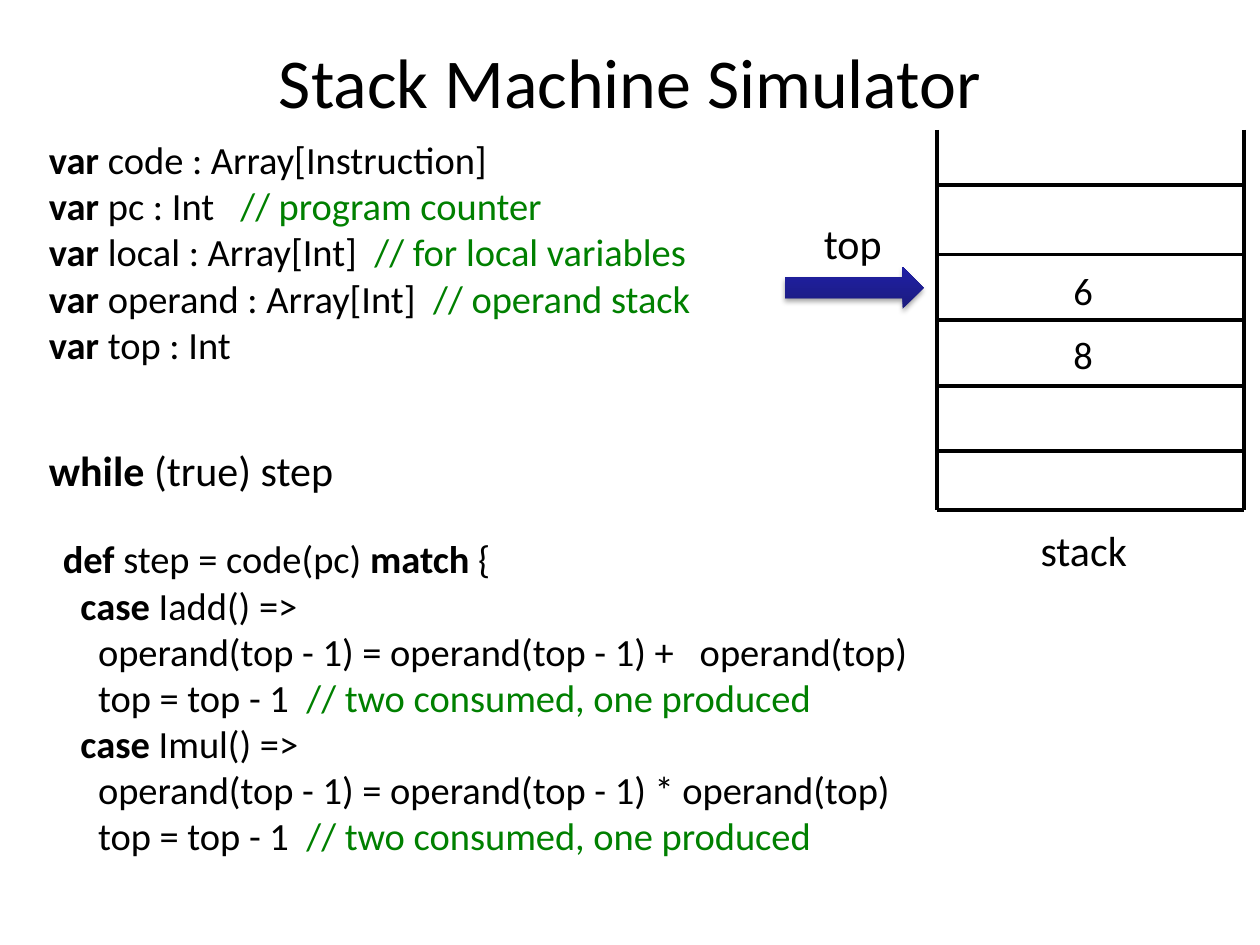
from lxml import etree
from pptx import Presentation
from pptx.dml.color import RGBColor
from pptx.enum.shapes import MSO_CONNECTOR as CONN, MSO_SHAPE as SHAPE
from pptx.enum.text import MSO_ANCHOR as ANCHOR, MSO_AUTO_SIZE as AUTO, PP_ALIGN as ALIGN
from pptx.oxml import parse_xml
from pptx.oxml.ns import nsdecls, qn
from pptx.util import Inches, Pt

BLACK, GREEN = "000000", "008000"
INDENT = 0.14  # one code level

# Run styles: keyword, plain code, comment
KEY = {"bold": True, "color": BLACK}
CODE = {"bold": False, "color": BLACK}
NOTE = {"bold": False, "color": GREEN}

# Each code line: indent level, then (text, style) runs
VARS = [
    (0, ("var ", KEY), ("code : Array[Instruction]", CODE)),
    (0, ("var ", KEY), ("pc : Int   ", CODE), ("// program counter", NOTE)),
    (0, ("var ", KEY), ("local : Array[Int]  ", CODE), ("// for local variables", NOTE)),
    (0, ("var ", KEY), ("operand : Array[Int]  ", CODE), ("// operand stack", NOTE)),
    (0, ("var ", KEY), ("top : Int", CODE)),
]
LOOP = [(0, ("while ", KEY), ("(true) step", CODE))]
POP = (2, ("top = top - 1  ", CODE), ("// two consumed, one produced", NOTE))
STEP = [
    (0, ("def ", KEY), ("step = code(pc) ", CODE), ("match", KEY), (" {", CODE)),
    (1, ("case ", KEY), ("Iadd() =>", CODE)),
    (2, ("operand(top - 1) = operand(top - 1) +   operand(top)", CODE)),
    POP,
    (1, ("case ", KEY), ("Imul() =>", CODE)),
    (2, ("operand(top - 1) = operand(top - 1) * operand(top)", CODE)),
    POP,
]

# Stack frame
LEFT, RIGHT, TOP, BOTTOM = 7.44, 9.87, 1.03, 4.05
ROWS = [1.47, 2.02, 2.54, 3.06, 3.58, BOTTOM]


def rgb(color):
    return RGBColor.from_string(color)


def add_run(p, text, size, style):
    r = p.add_run()
    r.text = text
    font = {"name": "Calibri", "size": Pt(size), "bold": style["bold"]}
    for name, value in font.items():
        setattr(r.font, name, value)
    r.font.color.rgb = rgb(style["color"])


def add_text(slide, box, lines, size, wrap=True):
    tf = slide.shapes.add_textbox(*map(Inches, box)).text_frame
    for name, value in {"word_wrap": wrap, "auto_size": AUTO.SHAPE_TO_FIT_TEXT}.items():
        setattr(tf, name, value)
    for i, (level, *runs) in enumerate(lines):
        p = tf.add_paragraph() if i else tf.paragraphs[0]
        if level:
            p._p.get_or_add_pPr().set("marL", str(Inches(level * INDENT)))
        for text, style in runs:
            add_run(p, text, size, style)


def add_label(slide, box, text, size):
    add_text(slide, box, [(0, (text, CODE))], size, wrap=False)


def add_line(slide, *ends):
    line = slide.shapes.add_connector(CONN.STRAIGHT, *map(Inches, ends))
    line.line.color.rgb = rgb(BLACK)
    line.line.width = Pt(2.25)
    etree.SubElement(line._element.spPr, qn("a:effectLst"))


def add_pointer(slide, box):
    sp = slide.shapes.add_shape(SHAPE.RIGHT_ARROW, *map(Inches, box))
    sp.fill.gradient()
    sp.fill.gradient_angle = 90
    for stop, color in zip(sp.fill.gradient_stops, ("1B1B7E", "2020A6")):
        stop.color.rgb = rgb(color)
    sp.line.fill.background()
    # Soft shadow below the arrow
    sp.shadow.inherit = False
    sp._element.spPr.find(qn("a:effectLst")).append(parse_xml(
        f'<a:outerShdw {nsdecls("a")} blurRad="{Pt(3.1)}" dist="{Pt(1.8)}" '
        'dir="5400000" rotWithShape="0"><a:srgbClr val="000000">'
        '<a:alpha val="35000"/></a:srgbClr></a:outerShdw>'))


def add_title(slide, box, text):
    title = slide.shapes.title
    for name, value in zip(("left", "top", "width", "height"), box):
        setattr(title, name, Inches(value))
    tf = title.text_frame
    tf.vertical_anchor = ANCHOR.MIDDLE
    p = tf.paragraphs[0]
    p.alignment = ALIGN.CENTER
    add_run(p, text, 40, CODE)


def add_stack(slide):
    for x in (LEFT, RIGHT):
        add_line(slide, x, TOP, x, BOTTOM)
    for y in ROWS:
        add_line(slide, LEFT, y, RIGHT, y)
    add_label(slide, (8.42, 2.07, 0.36, 0.47), "6", 22)
    add_label(slide, (8.42, 2.58, 0.36, 0.47), "8", 22)
    add_label(slide, (8.16, 4.11, 0.89, 0.5), "stack", 24)


def main():
    prs = Presentation()
    prs.slide_width, prs.slide_height = Inches(10), Inches(7.5)
    slide = prs.slides.add_slide(prs.slide_layouts[5])
    add_title(slide, (0.5, 0.3, 9, 0.68), "Stack Machine Simulator")

    # Code blocks
    add_text(slide, (0.29, 1.03, 5.92, 1.95), VARS, 22)
    add_text(slide, (0.29, 3.48, 2.51, 0.5), LOOP, 24)
    add_text(slide, (0.4, 4.2, 7.65, 2.69), STEP, 22)

    # Operand stack and its top pointer
    add_stack(slide)
    add_pointer(slide, (6.23, 2.12, 1.1, 0.33))
    add_label(slide, (6.44, 1.68, 0.66, 0.5), "top", 24)
    prs.save("out.pptx")


if __name__ == "__main__":
    main()
